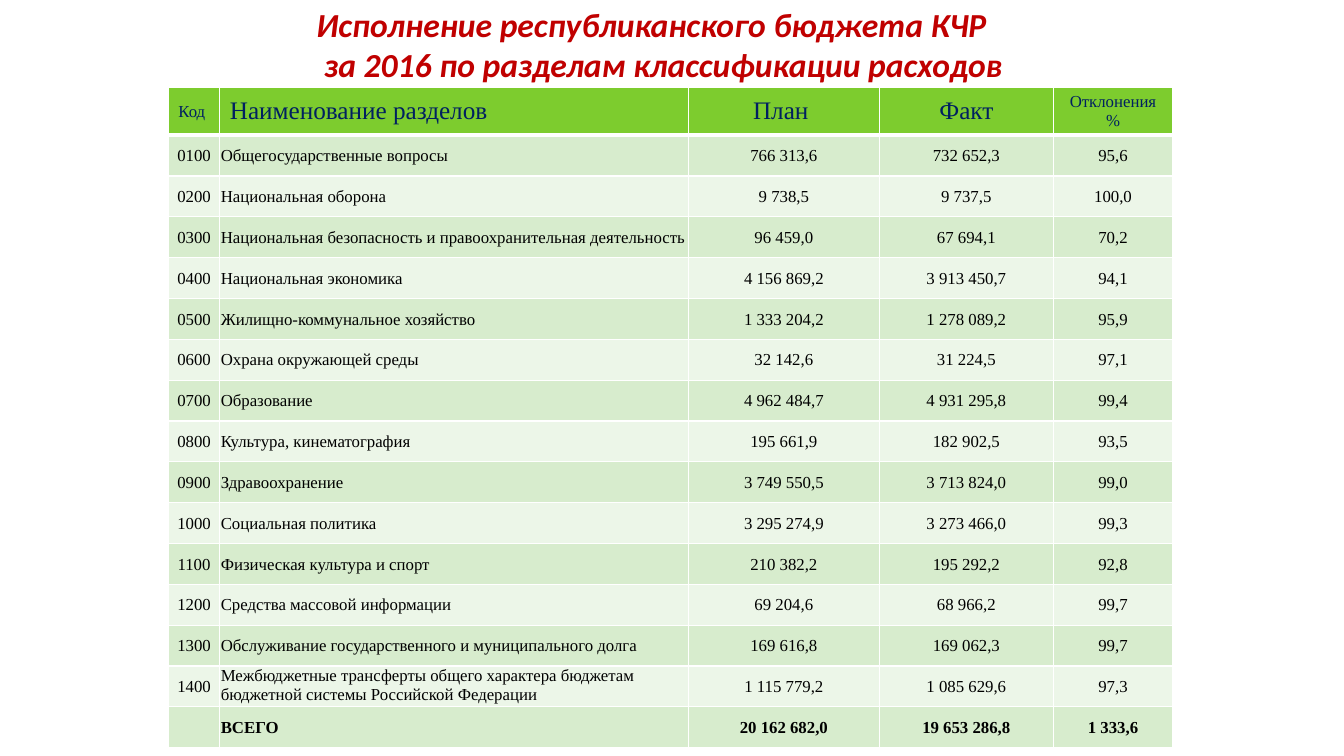
from dataclasses import dataclass

from lxml.etree import SubElement
from pptx import Presentation
from pptx.dml.color import RGBColor as RGB
from pptx.enum.text import MSO_ANCHOR as Anchor, MSO_AUTO_SIZE as AutoSize, PP_ALIGN as Align
from pptx.oxml.ns import qn
from pptx.util import Inches, Pt


@dataclass(frozen=True)
class Theme:
    title_font: str = "Calibri"
    table_font: str = "Times New Roman"
    title_color: str = "C00000"
    header_color: str = "002060"
    body_color: str = "000000"
    header_fill: str = "7DCC2E"
    band_fills: tuple = ("D7ECCD", "ECF6E8")
    border: str = "FFFFFF"
    title_size: int = 24
    header_size: int = 18
    body_size: int = 12


THEME = Theme()
TITLE = "Исполнение республиканского бюджета КЧР\n за 2016 по разделам классификации расходов"
HEADER = ("Код", "Наименование разделов", "План ", "Факт", "Отклонения%")
SMALL_HEADINGS = ("Код", "Отклонения%")
SECTIONS = (
    ("0100", "Общегосударственные вопросы", "766 313,6", "732 652,3", "95,6"),
    ("0200", "Национальная оборона", "9 738,5", "9 737,5", "100,0"),
    ("0300", "Национальная безопасность и правоохранительная деятельность",
     "96 459,0", "67 694,1", "70,2"),
    ("0400", "Национальная экономика", "4 156 869,2", "3 913 450,7", "94,1"),
    ("0500", "Жилищно-коммунальное хозяйство", "1 333 204,2", "1 278 089,2", "95,9"),
    ("0600", "Охрана окружающей среды", "32 142,6", "31 224,5", "97,1"),
    ("0700", "Образование", "4 962 484,7", "4 931 295,8", "99,4"),
    ("0800", "Культура, кинематография", "195 661,9", "182 902,5", "93,5"),
    ("0900", "Здравоохранение", "3 749 550,5", "3 713 824,0", "99,0"),
    ("1000", "Социальная политика", "3 295 274,9", "3 273 466,0", "99,3"),
    ("1100", "Физическая культура и спорт", "210 382,2", "195 292,2", "92,8"),
    ("1200", "Средства массовой информации", "69 204,6", "68 966,2", "99,7"),
    ("1300", "Обслуживание государственного и муниципального долга",
     "169 616,8", "169 062,3", "99,7"),
    ("1400", "Межбюджетные трансферты общего характера бюджетам бюджетной системы "
     "Российской Федерации", "1 115 779,2", "1 085 629,6", "97,3"),
)
TOTAL = ("", "ВСЕГО", "20 162 682,0", "19 653 286,8", "1 333,6")
COLUMN_WIDTHS = (0.51, 4.65, 1.89, 1.73, 1.18)
HEADER_HEIGHT = 0.47


def format_runs(paragraph, font, size, color, bold=False, italic=False):
    for run in paragraph.runs:
        run.font.name = font
        run.font.size = Pt(size)
        run.font.color.rgb = RGB.from_string(color)
        run.font.bold = bold
        run.font.italic = italic


def set_borders(cell, bottom=1):
    """Draw all four cell edges; must run before the cell gets its fill."""
    properties = cell._tc.get_or_add_tcPr()
    for tag, width in (("a:lnL", 1), ("a:lnR", 1), ("a:lnT", 1), ("a:lnB", bottom)):
        line = SubElement(properties, qn(tag), w=str(Pt(width)))
        SubElement(SubElement(line, qn("a:solidFill")), qn("a:srgbClr"), val=THEME.border)


def fill_cell(cell, text, fill, align, size, color, bold=False, bottom=1):
    set_borders(cell, bottom)
    cell.fill.solid()
    cell.fill.fore_color.rgb = RGB.from_string(fill)
    cell.vertical_anchor = Anchor.MIDDLE
    cell.text_frame.text = text
    paragraph = cell.text_frame.paragraphs[0]
    paragraph.alignment = align
    format_runs(paragraph, THEME.table_font, size, color, bold)


def add_title(slide, left, top, width, height):
    frame = slide.shapes.add_textbox(
        Inches(left), Inches(top), Inches(width), Inches(height)).text_frame
    frame.text = TITLE
    frame.word_wrap = False
    frame.auto_size = AutoSize.SHAPE_TO_FIT_TEXT
    for paragraph in frame.paragraphs:
        format_runs(paragraph, THEME.title_font, THEME.title_size, THEME.title_color, True, True)


def add_budget_table(slide, left, top, width, height):
    body = SECTIONS + (TOTAL,)
    table = slide.shapes.add_table(
        len(body) + 1, len(HEADER),
        Inches(left), Inches(top), Inches(width), Inches(height)).table
    table.horz_banding = False
    for column, column_width in zip(table.columns, COLUMN_WIDTHS):
        column.width = Inches(column_width)
    for row in table.rows:
        row.height = Inches((height - HEADER_HEIGHT) / len(body))
    table.rows[0].height = Inches(HEADER_HEIGHT)

    for c, heading in enumerate(HEADER):
        size = THEME.body_size if heading in SMALL_HEADINGS else THEME.header_size
        fill_cell(table.cell(0, c), heading, THEME.header_fill,
                  Align.LEFT if c < 2 else Align.CENTER, size, THEME.header_color, bottom=3)

    for r, section in enumerate(body):
        for c, text in enumerate(section):
            cell = table.cell(r + 1, c)
            cell.margin_left = cell.margin_right = cell.margin_top = Inches(0.01)
            cell.margin_bottom = 0
            fill_cell(cell, text, THEME.band_fills[r % 2],
                      Align.LEFT if c == 1 else Align.CENTER,
                      THEME.body_size, THEME.body_color, bold=section is TOTAL)
    table.cell(len(SECTIONS), 1).vertical_anchor = Anchor.TOP


def main():
    deck = Presentation()
    deck.slide_width, deck.slide_height = Inches(13.33), Inches(7.5)
    slide = deck.slides.add_slide(deck.slide_layouts[6])
    add_budget_table(slide, 1.67, 0.87, sum(COLUMN_WIDTHS), 6.55)
    add_title(slide, 3.04, -0.01, 7.14, 0.91)
    deck.save("out.pptx")


if __name__ == "__main__":
    main()
